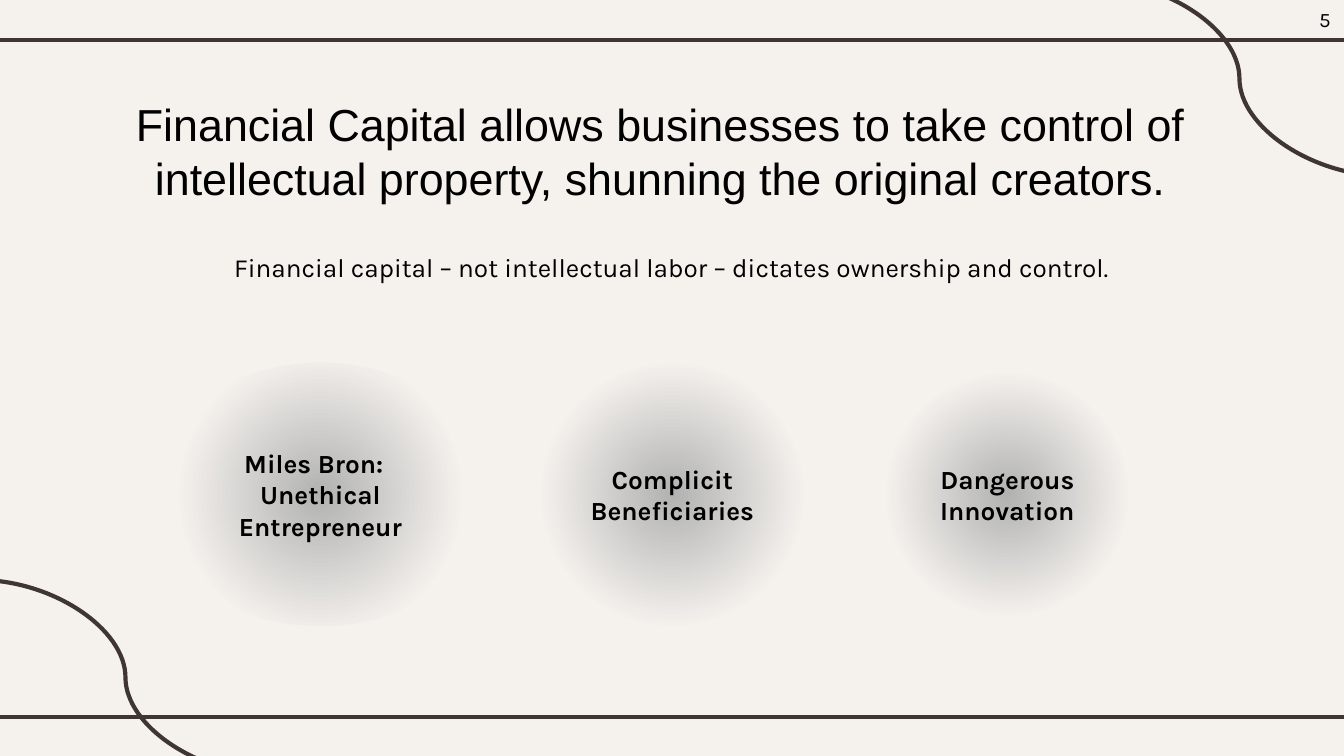
from dataclasses import dataclass

from lxml.etree import SubElement
from pptx import Presentation
from pptx.dml.color import RGBColor
from pptx.enum.shapes import MSO_CONNECTOR, MSO_SHAPE
from pptx.enum.text import MSO_ANCHOR, MSO_AUTO_SIZE, PP_ALIGN
from pptx.oxml.ns import qn
from pptx.util import Pt


@dataclass(frozen=True)
class Theme:
    background: str = "F5F2EE"
    rule: str = "3F3533"
    glow: str = "B2B2B2"
    text: str = "000000"
    heading_font: str = "Arial"
    body_font: str = "Karla"
    heading_size: int = 24
    body_size: int = 14
    number_size: int = 11
    rule_width: float = 2.25


THEME = Theme()
WIDTH, HEIGHT = 1344, 756
PX = 9144000 / WIDTH

# Content: text, box (left, top, width, height), font, size, alignment
TEXTS = [
    ("Financial Capital allows businesses to take control of intellectual "
     "property, shunning the original creators.",
     (71, 90, 1178, 122), THEME.heading_font, THEME.heading_size, PP_ALIGN.CENTER),
    ("Financial capital – not intellectual labor – dictates ownership and control.",
     (71, 245, 1202, 46), THEME.body_font, THEME.body_size, PP_ALIGN.CENTER),
    ("5", (1274, 0, 70, 39), THEME.body_font, THEME.number_size, PP_ALIGN.RIGHT),
]

# Themes: paragraphs, left, width
THEMES = [
    (["Miles Bron:  ", "Unethical Entrepreneur"], 148, 345),
    (["Complicit Beneficiaries"], 520, 305),
    (["Dangerous Innovation"], 876, 263),
]
THEMES_TOP, THEMES_HEIGHT = 363, 263

# Decoration
RULE_TOPS = [717, 40]
RULE_OVERHANG = 11
CURVE_STARTS = [(1093, -19), (-21, 580)]
CURVE_WIDTH, CURVE_HEIGHT = 293, 195


def px(*lengths):
    return [round(length * PX) for length in lengths]


def add_rule(slide, style, *ends):
    rule = slide.shapes.add_connector(style, *px(*ends))
    rule.line.color.rgb = RGBColor.from_string(THEME.rule)
    rule.line.width = Pt(THEME.rule_width)
    SubElement(rule._element.spPr, qn("a:effectLst"))


def write(frame, paragraphs, font, size, align, bold=False):
    frame.word_wrap = True
    frame.text = "\n".join(paragraphs)
    for paragraph in frame.paragraphs:
        paragraph.alignment = align
        paragraph.font.name = font
        paragraph.font.size = Pt(size)
        paragraph.font.bold = bold
        paragraph.font.color.rgb = RGBColor.from_string(THEME.text)


def fill_radial(shape, stops):
    """Fill from the centre outwards; stops are (percent, colour)."""
    shape.fill.gradient()
    gradient = shape._element.spPr.find(qn("a:gradFill"))
    for child in list(gradient):
        gradient.remove(child)
    stop_list = SubElement(gradient, qn("a:gsLst"))
    for percent, colour in stops:
        stop = SubElement(stop_list, qn("a:gs"), pos=str(percent * 1000))
        SubElement(stop, qn("a:srgbClr"), val=colour)
    radial = SubElement(gradient, qn("a:path"), path="circle")
    SubElement(radial, qn("a:fillToRect"), dict.fromkeys("ltrb", "50000"))


def main():
    prs = Presentation()
    prs.slide_width, prs.slide_height = px(WIDTH, HEIGHT)
    slide = prs.slides.add_slide(prs.slide_layouts[6])
    slide.background.fill.solid()
    slide.background.fill.fore_color.rgb = RGBColor.from_string(THEME.background)

    # Rules and corner curves
    for top in RULE_TOPS:
        add_rule(slide, MSO_CONNECTOR.STRAIGHT,
                 -RULE_OVERHANG, top, WIDTH + RULE_OVERHANG, top)
    for left, top in CURVE_STARTS:
        add_rule(slide, MSO_CONNECTOR.CURVE,
                 left, top, left + CURVE_WIDTH, top + CURVE_HEIGHT)

    # Heading, statement and page number
    for text, box, font, size, align in TEXTS:
        frame = slide.shapes.add_textbox(*px(*box)).text_frame
        write(frame, [text], font, size, align)
        frame.auto_size = MSO_AUTO_SIZE.SHAPE_TO_FIT_TEXT

    # Glowing themes
    for paragraphs, left, width in THEMES:
        glow = slide.shapes.add_shape(
            MSO_SHAPE.OVAL, *px(left, THEMES_TOP, width, THEMES_HEIGHT))
        glow.shadow.inherit = False
        glow.line.fill.background()
        fill_radial(glow, [(0, THEME.glow), (67, THEME.background)])
        frame = glow.text_frame
        frame.vertical_anchor = MSO_ANCHOR.MIDDLE
        frame.margin_left, frame.margin_top, frame.margin_right, frame.margin_bottom = (
            px(13, 13, 13, 13))
        write(frame, paragraphs, THEME.body_font, THEME.body_size,
              PP_ALIGN.CENTER, bold=True)

    prs.save("out.pptx")


if __name__ == "__main__":
    main()
